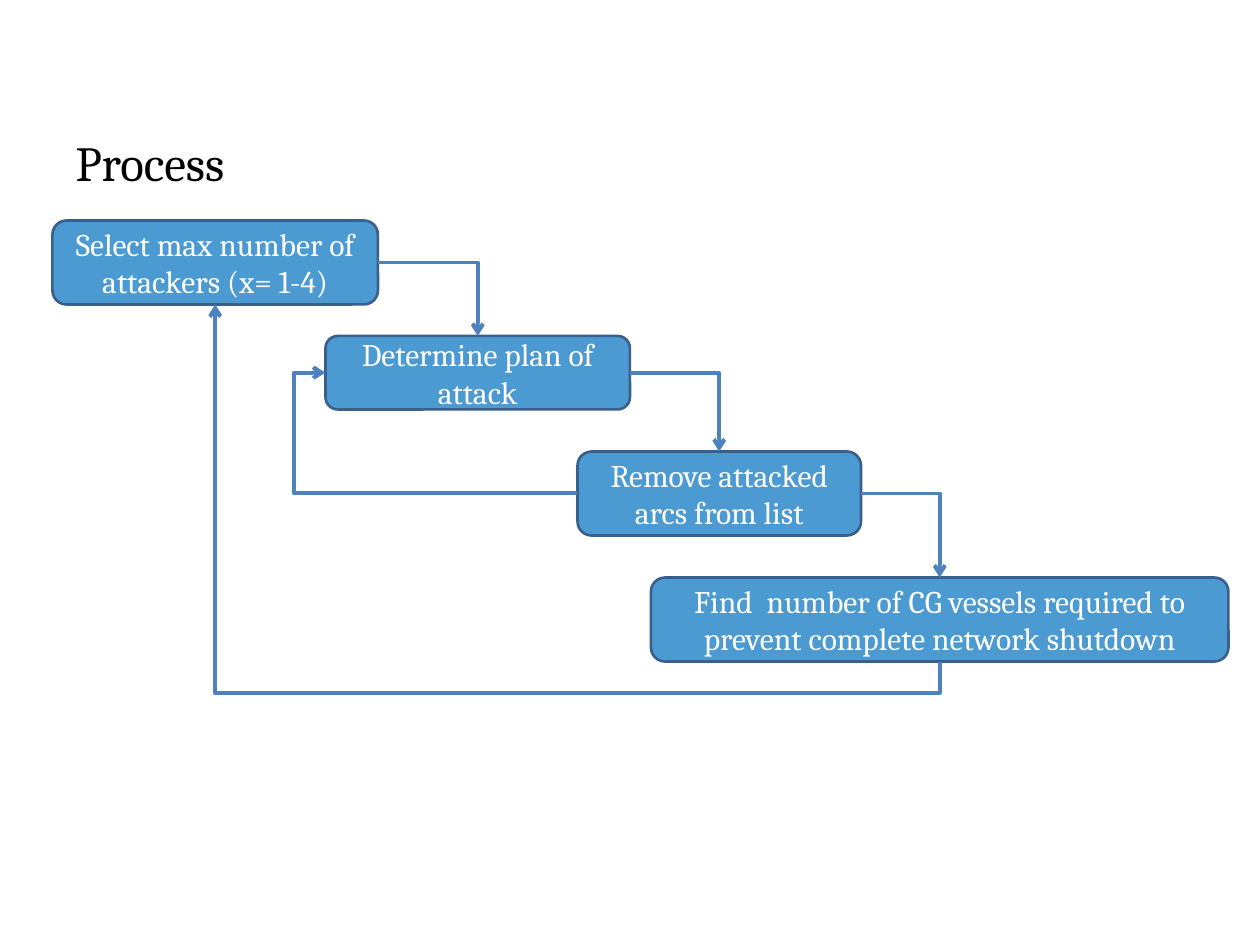
from lxml import etree
from pptx import Presentation
from pptx.dml.color import RGBColor
from pptx.enum.shapes import MSO_CONNECTOR, MSO_SHAPE
from pptx.enum.text import MSO_ANCHOR, PP_ALIGN
from pptx.oxml.ns import qn
from pptx.util import Pt

PX = 9525  # 96 px to the inch
ROUNDED = MSO_SHAPE.ROUNDED_RECTANGLE
ELBOW = MSO_CONNECTOR.ELBOW
TOP, LEFT, BOTTOM, RIGHT = range(4)


def color(hex_string):
    return RGBColor.from_string(hex_string)


def add_run(paragraph, text, size, hex_string):
    run = paragraph.add_run()
    run.text = text
    run.font.name = "Cambria"
    run.font.size = Pt(size)
    run.font.color.rgb = color(hex_string)


presentation = Presentation()
presentation.slide_width = 960 * PX
presentation.slide_height = 720 * PX
slide = presentation.slides.add_slide(presentation.slide_layouts[5])

title = slide.shapes.title
title.left, title.top, title.width, title.height = 48 * PX, 96 * PX, 864 * PX, 96 * PX
title.text_frame.vertical_anchor = MSO_ANCHOR.TOP
title_paragraph = title.text_frame.paragraphs[0]
title_paragraph.alignment = PP_ALIGN.LEFT
add_run(title_paragraph, "Process", 28, "000000")

# Steps: left, top, width, height, text
steps = [
    (40, 168, 248, 64, "Select max number of attackers (x= 1-4)"),
    (248, 256, 232, 56, "Determine plan of attack"),
    (440, 344, 216, 64, "Remove attacked arcs from list"),
    (496, 440, 440, 64, "Find  number of CG vessels required to prevent complete network shutdown"),
]
boxes = []
for left, top, width, height, text in steps:
    box = slide.shapes.add_shape(ROUNDED, left * PX, top * PX, width * PX, height * PX)
    box.shadow.inherit = False
    box.fill.solid()
    box.fill.fore_color.rgb = color("0070C0")
    fill_color = box.fill._xPr.find(qn("a:solidFill"))[0]
    etree.SubElement(fill_color, qn("a:alpha"), val="70000")
    box.line.color.rgb = color("3A5F8C")
    box.line.width = Pt(1.5)
    box.text_frame.word_wrap = True
    box.text_frame.vertical_anchor = MSO_ANCHOR.MIDDLE
    paragraph = box.text_frame.paragraphs[0]
    paragraph.alignment = PP_ALIGN.CENTER
    add_run(paragraph, text, 18, "FFFFFF")
    boxes.append(box)

# Links: from step, side, to step, side, bend position (None for a single corner)
links = [
    (0, RIGHT, 1, TOP, None),
    (1, RIGHT, 2, TOP, None),
    (2, RIGHT, 3, TOP, None),
    (3, BOTTOM, 0, BOTTOM, -8824),
    (2, LEFT, 1, LEFT, 112500),
]
for start, start_side, end, end_side, bend in links:
    connector = slide.shapes.add_connector(ELBOW, 0, 0, 0, 0)
    connector.begin_connect(boxes[start], start_side)
    connector.end_connect(boxes[end], end_side)
    connector.line.color.rgb = color("4F81BD")
    connector.line.width = Pt(2.25)
    properties = connector._element.spPr
    etree.SubElement(connector.line._get_or_add_ln(), qn("a:tailEnd"), type="arrow")
    etree.SubElement(properties, qn("a:effectLst"))

    geometry = properties.find(qn("a:prstGeom"))
    if bend is None:
        geometry.set("prst", "bentConnector2")
    else:
        adjustments = geometry.find(qn("a:avLst"))
        etree.SubElement(adjustments, qn("a:gd"), name="adj1", fmla=f"val {bend}")

    if start_side == BOTTOM:
        # A path leaving downwards is a sideways one turned a quarter about its centre
        width, height = connector.width, connector.height
        connector.left += (width - height) // 2
        connector.top += (height - width) // 2
        connector.width, connector.height = height, width
        frame = properties.find(qn("a:xfrm"))
        frame.set("rot", "5400000")
        frame.set("flipH", "1")
        frame.set("flipV", "0")

presentation.save("out.pptx")
